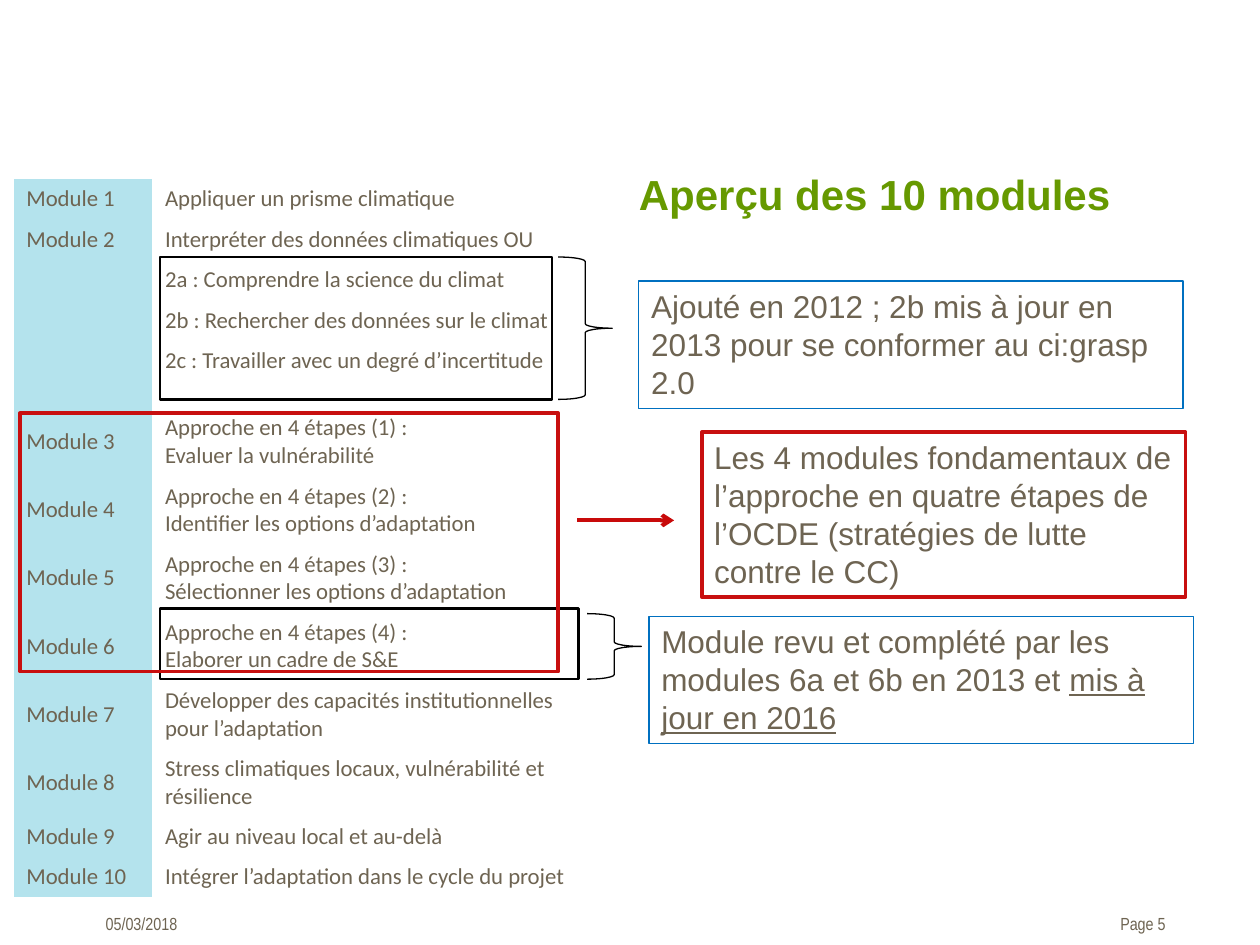
from dataclasses import dataclass
from typing import NamedTuple, Optional

from lxml.etree import SubElement
from pptx import Presentation
from pptx.dml.color import RGBColor
from pptx.enum.shapes import MSO_CONNECTOR, MSO_SHAPE
from pptx.enum.text import MSO_ANCHOR, MSO_AUTO_SIZE, PP_ALIGN
from pptx.oxml.ns import qn
from pptx.util import Inches, Pt

COLORS = {
    "text": "6E6452", "title": "669900", "label": "B4E3ED", "white": "FFFFFF",
    "black": "000000", "blue": "0070C0", "red": "C80F0F", "arrow": "C80A0A",
}
GRID_COLUMNS, GRID_ROWS = 100, 75
LINE_HEIGHT, CELL_PADDING = 2.18, 1
NO_STYLE_TABLE = "{2D5ABB26-0587-4C30-8999-92F81FD0307C}"


class Area(NamedTuple):
    """Left, top, width and height in grid columns and rows."""
    left: float
    top: float
    width: float
    height: float


class Span(NamedTuple):
    text: str
    underline: bool = False


@dataclass
class Module:
    label: str
    lines: list[str]
    line_count: int = 1
    anchor: MSO_ANCHOR = MSO_ANCHOR.MIDDLE


@dataclass
class Outline:
    area: Area
    color: str
    weight: float
    spans: tuple[Span, ...] = ()
    fill: Optional[str] = None
    shape: MSO_SHAPE = MSO_SHAPE.RECTANGLE


MODULES = [
    Module("Module 1", ["Appliquer un prisme climatique"]),
    Module("Module 2", ["Interpréter des données climatiques OU"]),
    Module("", ["2a : Comprendre la science du climat"]),
    Module("", ["2b : Rechercher des données sur le climat"]),
    Module("", ["2c : Travailler avec un degré d’incertitude"], 2, MSO_ANCHOR.TOP),
    Module("Module 3", ["Approche en 4 étapes (1) :", "Evaluer la vulnérabilité"], 2),
    Module("Module 4", ["Approche en 4 étapes (2) :", "Identifier les options d’adaptation"], 2),
    Module("Module 5", ["Approche en 4 étapes (3) :", "Sélectionner les options d’adaptation"], 2),
    Module("Module 6", ["Approche en 4 étapes (4) :", "Elaborer un cadre de S&E"], 2),
    Module("Module 7", ["Développer des capacités institutionnelles pour l’adaptation"], 2),
    Module("Module 8", ["Stress climatiques locaux, vulnérabilité et résilience"], 2),
    Module("Module 9", ["Agir au niveau local et au-delà"]),
    Module("Module 10", ["Intégrer l’adaptation dans le cycle du projet"]),
]

OUTLINES = [
    Outline(Area(44.3, 20.4, 4.3, 11.3), "black", 0.75, shape=MSO_SHAPE.RIGHT_BRACE),
    Outline(Area(50.7, 22.3, 43.2, 10.1), "blue", 0.75, (
        Span("Ajouté en 2012 ; 2b mis à jour en 2013 pour se conformer au ci:grasp 2.0"),)),
    Outline(Area(46.6, 48.7, 4.3, 5.2), "black", 0.75, shape=MSO_SHAPE.RIGHT_BRACE),
    Outline(Area(51.5, 48.9, 43.2, 10.1), "blue", 0.75, (
        Span("Module revu et complété par les modules 6a et 6b en 2013 et "),
        Span("mis à jour en 2016", True))),
    Outline(Area(12.7, 20.4, 31.1, 11.3), "black", 1.5),
    Outline(Area(12.7, 48.3, 33.2, 5.6), "black", 1.5),
    Outline(Area(1.6, 32.8, 42.7, 20.5), "red", 2.25),
    Outline(Area(55.7, 34.3, 38.4, 13.1), "red", 2, (
        Span("Les 4 modules fondamentaux de l’approche en quatre étapes de l’OCDE "
             "(stratégies de lutte contre le CC)"),), "white"),
]

deck = Presentation()
deck.slide_width, deck.slide_height = Inches(10), Inches(7.5)


def across(columns: float) -> int:
    return int(deck.slide_width * columns / GRID_COLUMNS)


def down(rows: float) -> int:
    return int(deck.slide_height * rows / GRID_ROWS)


def place(area: Area) -> tuple[int, int, int, int]:
    return across(area.left), down(area.top), across(area.width), down(area.height)


def rgb(name: str) -> RGBColor:
    return RGBColor.from_string(COLORS[name])


def add_span(para, span: Span, size: float, font: str = "Arial",
             color: str = "text", bold: bool = False) -> None:
    run = para.add_run()
    run.text = span.text
    run.font.name, run.font.size = font, Pt(size)
    run.font.color.rgb = rgb(color)
    run.font.bold = bold
    if span.underline:
        run.font.underline = True


def set_title(page, text: str, area: Area) -> None:
    title = page.shapes.title
    title.left, title.top, title.width, title.height = place(area)
    frame = title.text_frame
    frame.auto_size, frame.word_wrap = MSO_AUTO_SIZE.NONE, True
    frame.vertical_anchor = MSO_ANCHOR.MIDDLE
    frame.margin_left = frame.margin_right = frame.margin_top = frame.margin_bottom = 0
    para = frame.paragraphs[0]
    para.alignment = PP_ALIGN.LEFT
    add_span(para, Span(text), 24, color="title", bold=True)


def fill_cell(cell, lines: list[str], color: str, anchor: MSO_ANCHOR) -> None:
    cell.fill.solid()
    cell.fill.fore_color.rgb = rgb(color)
    cell.vertical_anchor = anchor
    for index, line in enumerate(lines):
        frame = cell.text_frame
        para = frame.add_paragraph() if index else frame.paragraphs[0]
        if line:
            add_span(para, Span(line), 13, "Calibri")
        else:
            # Keeps an empty cell from stretching its row.
            SubElement(para._p, qn("a:endParaRPr"), sz="1300")


def add_modules(page, left: float, top: float, widths: tuple[float, float]) -> None:
    heights = [module.line_count * LINE_HEIGHT + CELL_PADDING for module in MODULES]
    area = Area(left, top, sum(widths), sum(heights))
    table = page.shapes.add_table(len(MODULES), len(widths), *place(area)).table
    table.first_row = table.horz_banding = False
    table._tbl.tblPr.find(qn("a:tableStyleId")).text = NO_STYLE_TABLE
    for column, width in zip(table.columns, widths):
        column.width = across(width)
    for row, module, height in zip(table.rows, MODULES, heights):
        row.height = down(height)
        fill_cell(row.cells[0], [module.label], "label", MSO_ANCHOR.MIDDLE)
        fill_cell(row.cells[1], module.lines, "white", module.anchor)


def add_outline(page, outline: Outline) -> None:
    box = page.shapes.add_shape(outline.shape, *place(outline.area))
    box.shadow.inherit = False
    box.line.color.rgb = rgb(outline.color)
    box.line.width = Pt(outline.weight)
    if outline.fill:
        box.fill.solid()
        box.fill.fore_color.rgb = rgb(outline.fill)
    else:
        box.fill.background()
    if outline.spans:
        box.text_frame.word_wrap = True
        box.text_frame.vertical_anchor = MSO_ANCHOR.TOP
        para = box.text_frame.paragraphs[0]
        para.alignment = PP_ALIGN.LEFT
        for span in outline.spans:
            add_span(para, span, 18)


def add_arrow(page, start: float, end: float, row: float) -> None:
    arrow = page.shapes.add_connector(
        MSO_CONNECTOR.STRAIGHT, across(start), down(row), across(end), down(row))
    arrow.line.color.rgb = rgb("arrow")
    arrow.line.width = Pt(2.25)
    SubElement(arrow.line._get_or_add_ln(), qn("a:tailEnd"), type="arrow")
    SubElement(arrow._element.spPr, qn("a:effectLst"))


def add_footer(page, text: str, area: Area, alignment: PP_ALIGN) -> None:
    frame = page.shapes.add_textbox(*place(area)).text_frame
    frame.word_wrap = True
    if alignment == PP_ALIGN.RIGHT:
        frame.margin_right = 0
    frame.paragraphs[0].alignment = alignment
    add_span(frame.paragraphs[0], Span(text), 10, "Arial Narrow")


def main() -> None:
    page = deck.slides.add_slide(deck.slide_layouts[5])
    set_title(page, "Aperçu des 10 modules", Area(50.7, 12.3, 45.1, 6.2))
    add_modules(page, 1.1, 14.2, (11, 34.5))
    add_footer(page, "05/03/2018", Area(7.4, 72, 14.2, 2.7), PP_ALIGN.LEFT)
    add_footer(page, "Page 5", Area(82.4, 72, 10.1, 2.7), PP_ALIGN.RIGHT)
    for outline in OUTLINES:
        add_outline(page, outline)
    add_arrow(page, 45.8, 53.5, 41.3)
    deck.save("out.pptx")


if __name__ == "__main__":
    main()
